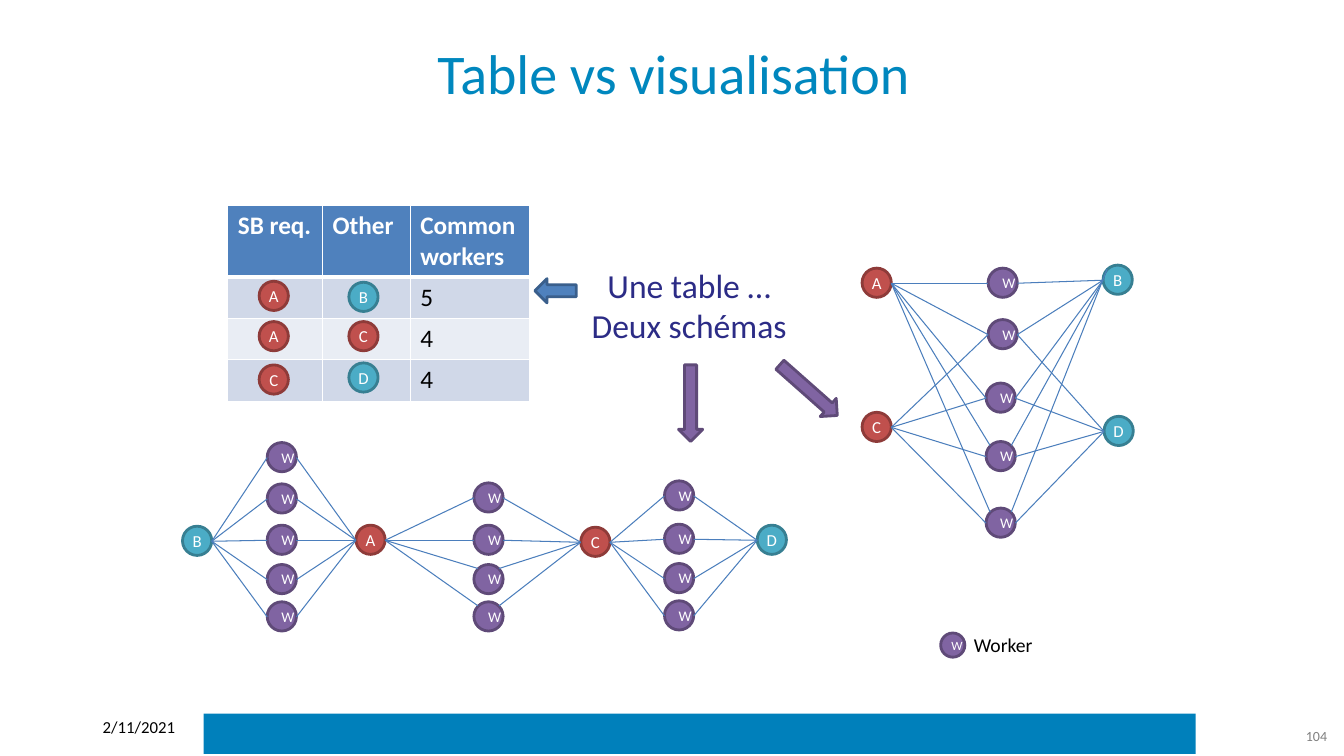
"""Build a slide comparing a table with two network diagrams of shared workers."""
from lxml import etree
from pptx import Presentation
from pptx.dml.color import RGBColor
from pptx.enum.shapes import MSO_CONNECTOR, MSO_SHAPE
from pptx.enum.text import MSO_ANCHOR, PP_ALIGN
from pptx.oxml.ns import qn
from pptx.util import Pt

PX = 9144
NODE = 29
LEFT_SIDE, RIGHT_SIDE = (0, 15), (29, 15)
TOP_LEFT, TOP_RIGHT = (4, 4), (25, 4)
LEFT, CENTER, RIGHT = PP_ALIGN.LEFT, PP_ALIGN.CENTER, PP_ALIGN.RIGHT
TOP, MIDDLE = MSO_ANCHOR.TOP, MSO_ANCHOR.MIDDLE
STRAIGHT = MSO_CONNECTOR.STRAIGHT
OVAL, RECTANGLE, DOWN_ARROW = MSO_SHAPE.OVAL, MSO_SHAPE.RECTANGLE, MSO_SHAPE.DOWN_ARROW

WHITE = RGBColor(0xFF, 0xFF, 0xFF)
BLACK = RGBColor(0x00, 0x00, 0x00)
GRAY = RGBColor(0x80, 0x80, 0x80)
TITLE_BLUE = RGBColor(0x00, 0x87, 0xBE)
BAR_BLUE = RGBColor(0x00, 0x80, 0xBB)
NAVY = RGBColor(0x2C, 0x2C, 0x86)
EDGE_BLUE = RGBColor(0x4B, 0x7E, 0xBC)
BLUE, DARK_BLUE = RGBColor(0x4F, 0x81, 0xBD), RGBColor(0x3A, 0x5F, 0x8C)
RED, DARK_RED = RGBColor(0xC0, 0x50, 0x4D), RGBColor(0x8E, 0x3B, 0x39)
TEAL, DARK_TEAL = RGBColor(0x4B, 0xAC, 0xC6), RGBColor(0x37, 0x7F, 0x92)
PURPLE, DARK_PURPLE = RGBColor(0x80, 0x64, 0xA2), RGBColor(0x5F, 0x4A, 0x78)
BAND_DARK = RGBColor(0xD0, 0xD8, 0xE8)
BAND_LIGHT = RGBColor(0xE9, 0xED, 0xF4)


def write_text(frame, text, size=12, color=WHITE, bold=False, align=CENTER, anchor=MIDDLE, wrap=True):
    frame.text = text
    frame.word_wrap = wrap
    frame.vertical_anchor = anchor
    for paragraph in frame.paragraphs:
        paragraph.alignment = align
        font = paragraph.font
        font.name, font.size, font.bold = "Calibri", Pt(size), bold
        font.color.rgb = color


def add_filled(kind, left, top, width, height, fill, outline=None):
    shape = slide.shapes.add_shape(kind, left * PX, top * PX, width * PX, height * PX)
    shape.shadow.inherit = False
    shape.fill.solid()
    shape.fill.fore_color.rgb = fill
    if outline is None:
        shape.line.fill.background()
    else:
        shape.line.color.rgb = outline
        shape.line.width = Pt(2)
    return shape


presentation = Presentation()
presentation.slide_width, presentation.slide_height = 1333 * PX, 750 * PX
slide = presentation.slides.add_slide(presentation.slide_layouts[5])
add_filled(RECTANGLE, 202, 708, 984, 40, BAR_BLUE)

title = slide.shapes.title
title.left, title.top, title.width, title.height = 68 * PX, 21 * PX, 1200 * PX, 101 * PX
write_text(title.text_frame, "Table vs visualisation", size=40, color=TITLE_BLUE)

rows = [("SB req.", "Other", "Common workers"), ("", "", "5"), ("", "", "4"), ("", "", "4")]
row_fills = [BLUE, BAND_DARK, BAND_LIGHT, BAND_DARK]
table = slide.shapes.add_table(4, 3, 226 * PX, 204 * PX, 299 * PX, 192 * PX).table
for column, width in zip(table.columns, (94, 87, 118)):
    column.width = width * PX
for row_index, texts in enumerate(rows):
    header = row_index == 0
    table.rows[row_index].height = (69 if header else 41) * PX
    for column_index, text in enumerate(texts):
        cell = table.cell(row_index, column_index)
        write_text(cell.text_frame, text, size=18, color=WHITE if header else BLACK,
                   bold=header, align=LEFT, anchor=TOP)
        properties = cell._tc.get_or_add_tcPr()
        for side in ("lnL", "lnR", "lnT", "lnB"):
            thick = (header and side == "lnB") or (row_index == 1 and side == "lnT")
            border = etree.SubElement(properties, qn(f"a:{side}"), w=str(Pt(3 if thick else 1)))
            border_fill = etree.SubElement(border, qn("a:solidFill"))
            etree.SubElement(border_fill, qn("a:srgbClr"), val=str(WHITE))
        cell.fill.solid()
        cell.fill.fore_color.rgb = row_fills[row_index]

table_nodes = [("A", 257, 279), ("A", 257, 319), ("C", 257, 362),
               ("B", 346, 280), ("C", 346, 319), ("D", 346, 360)]

chain_hubs = [("B", 181, 522), ("A", 353, 521), ("C", 576, 523), ("D", 751, 521)]
chain_workers = [(265, (439, 480, 521, 560, 597)),
                 (470, (479, 521, 560, 597)),
                 (659, (477, 520, 559, 596))]
nodes = table_nodes + chain_hubs
edges = []
for step, (worker_left, worker_tops) in enumerate(chain_workers):
    for index, worker_top in enumerate(worker_tops):
        worker = ("W", worker_left, worker_top)
        at_corner = step == 1 and index >= 2
        nodes.append(worker)
        edges.append((chain_hubs[step], RIGHT_SIDE, worker, TOP_LEFT if at_corner else LEFT_SIDE))
        edges.append((worker, TOP_RIGHT if at_corner else RIGHT_SIDE, chain_hubs[step + 1], LEFT_SIDE))

net_a, net_b, net_c, net_d = net_hubs = [
    ("A", 855, 266), ("B", 1094, 263), ("C", 855, 409), ("D", 1095, 413)]
net_workers = [("W", 980, 266), ("W", 980, 317), ("W", 978, 380), ("W", 978, 438), ("W", 978, 504)]
nodes += net_hubs + net_workers
for index, worker in enumerate(net_workers):
    at_corner = index >= 3
    edges.append((net_a, RIGHT_SIDE, worker, TOP_LEFT if at_corner else LEFT_SIDE))
    edges.append((worker, TOP_RIGHT if at_corner else RIGHT_SIDE,
                  net_b, TOP_LEFT if index == 4 else LEFT_SIDE))
    if index > 0:
        edges.append((net_c, RIGHT_SIDE, worker, LEFT_SIDE))
        edges.append((worker, RIGHT_SIDE, net_d, LEFT_SIDE))

node_styles = {"A": (RED, DARK_RED, 12, 4, 5), "C": (RED, DARK_RED, 12, 4, 5),
               "B": (TEAL, DARK_TEAL, 12, 0, 0), "D": (TEAL, DARK_TEAL, 12, 0, 0),
               "W": (PURPLE, DARK_PURPLE, 10.5, 10, 5)}
for name, left, top in nodes:
    fill, outline, size, side_inset, end_inset = node_styles[name]
    frame = add_filled(OVAL, left, top, NODE, NODE, fill, outline).text_frame
    frame.margin_left = frame.margin_right = side_inset * PX
    frame.margin_top = frame.margin_bottom = end_inset * PX
    write_text(frame, name, size=size)

for (_, left, top), (start_x, start_y), (_, next_left, next_top), (end_x, end_y) in edges:
    edge = slide.shapes.add_connector(STRAIGHT, (left + start_x) * PX, (top + start_y) * PX,
                                      (next_left + end_x) * PX, (next_top + end_y) * PX)
    edge.line.color.rgb = EDGE_BLUE
    edge.line.width = Pt(0.75)
    etree.SubElement(edge._element.spPr, qn("a:effectLst"))

legend_node = add_filled(OVAL, 933, 628, 24, 24, PURPLE, DARK_PURPLE)
write_text(legend_node.text_frame, "W", size=9)

arrows = [(539, 268, 41, 90, BLUE, DARK_BLUE),
          (673, 362, 76, 0, PURPLE, DARK_PURPLE),
          (790, 349, 76, 311.5, PURPLE, DARK_PURPLE)]
for left, top, length, rotation, fill, outline in arrows:
    add_filled(DOWN_ARROW, left, top, 24, length, fill, outline).rotation = rotation

labels = [
    ("Worker", 956, 623, 79, 34, dict(size=14, color=BLACK, align=LEFT, anchor=TOP, wrap=False)),
    ("Une table …\nDeux schémas", 576, 258, 215, 91, dict(size=24, color=NAVY, anchor=TOP, wrap=False)),
    ("104", 1217, 710, 109, 40, dict(size=10, color=GRAY, align=RIGHT)),
    ("2/11/2021", 92, 706, 126, 40, dict(size=12, color=BLACK, align=LEFT, anchor=TOP)),
]
for text, left, top, width, height, text_format in labels:
    label = slide.shapes.add_textbox(left * PX, top * PX, width * PX, height * PX)
    write_text(label.text_frame, text, **text_format)

presentation.save("out.pptx")
